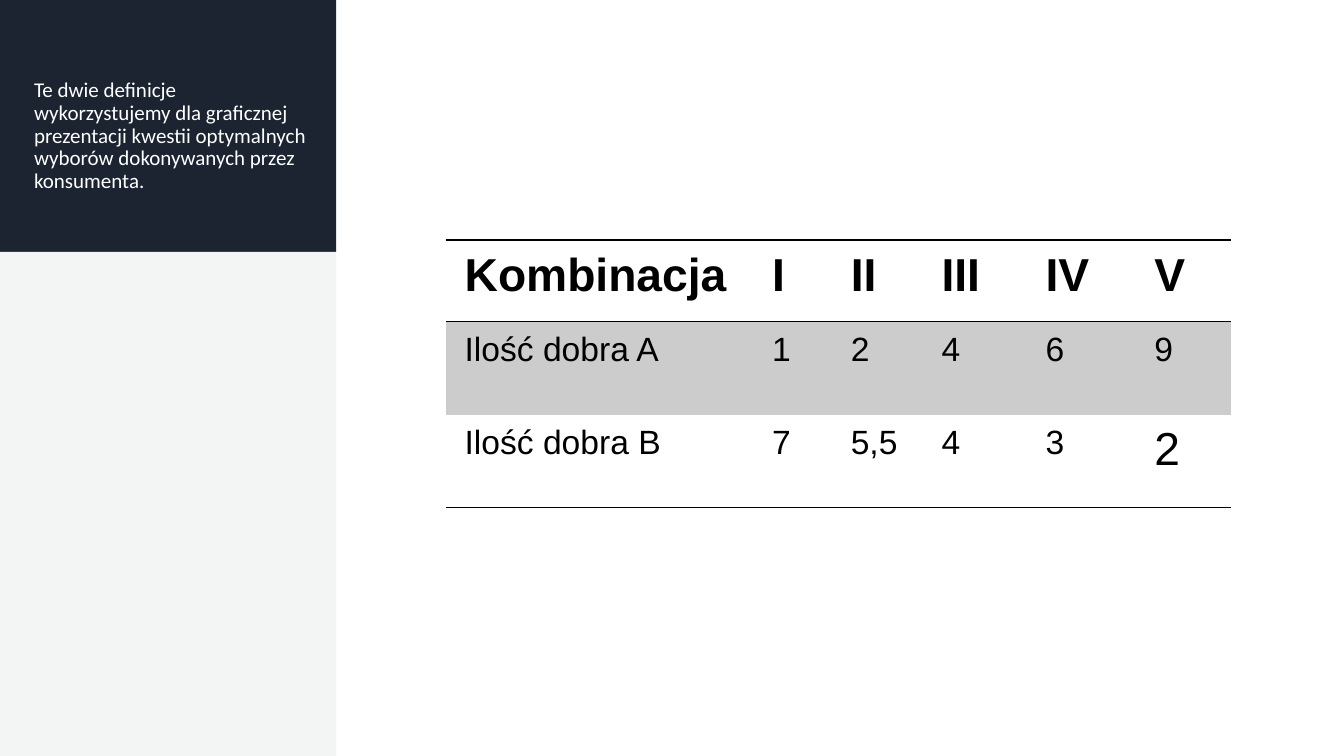
from dataclasses import dataclass

from lxml import etree
from pptx import Presentation
from pptx.dml.color import RGBColor
from pptx.enum.shapes import MSO_SHAPE
from pptx.enum.text import MSO_ANCHOR
from pptx.oxml.ns import qn
from pptx.util import Cm, Pt

RECT = MSO_SHAPE.RECTANGLE
MIDDLE = MSO_ANCHOR.MIDDLE


@dataclass(frozen=True)
class Theme:
    """Colours, fonts and type sizes of the slide."""
    navy: str = "1B2430"
    pale: str = "F3F5F4"
    band: str = "CCCCCC"
    white: str = "FFFFFF"
    black: str = "000000"
    text_font: str = "Calibri"
    table_font: str = "Arial"
    text_size: int = 15
    body_size: int = 24
    large_size: int = 33
    rule_width: int = 1


THEME = Theme()
INTRO = ("Te dwie definicje wykorzystujemy dla graficznej prezentacji kwestii "
         "optymalnych wyborów dokonywanych przez konsumenta.")
ROWS = [
    ["Kombinacja", "I", "II", "III", "IV", "V"],
    ["Ilość dobra A", "1", "2", "4", "6", "9"],
    ["Ilość dobra B", "7", "5,5", "4", "3", "2"],
]
COL_WIDTHS = [7.75, 1.98, 2.29, 2.62, 2.74, 2.41]
ROW_HEIGHTS = [2.06, 2.34, 2.34]
ROW_RULES = [("lnT", "lnB"), ("lnT",), ("lnB",)]
SIDEBAR_WIDTH, INTRO_HEIGHT = 8.47, 6.35
SLIDE_WIDTH, SLIDE_HEIGHT = 33.87, 19.05


def style_text(p, font, size, color, bold=False):
    """Format every run of a paragraph."""
    for r in p.runs:
        r.font.name = font
        r.font.size = Pt(size)
        r.font.bold = bold
        r.font.color.rgb = RGBColor.from_string(color)


def add_panel(s, top, height, color):
    """Add a plain sidebar rectangle."""
    sp = s.shapes.add_shape(RECT, Cm(0), Cm(top), Cm(SIDEBAR_WIDTH), Cm(height))
    sp.shadow.inherit = False
    sp.fill.solid()
    sp.fill.fore_color.rgb = RGBColor.from_string(color)
    sp.line.fill.background()


def add_intro(s):
    """Add the introductory sentence on the dark panel."""
    sp = s.shapes.add_textbox(Cm(0.61), Cm(1.09), Cm(7.37), Cm(4.7))
    tf = sp.text_frame
    tf.word_wrap = True
    tf.vertical_anchor = MIDDLE
    tf.text = INTRO
    p = tf.paragraphs[0]
    p.line_spacing = 0.9
    style_text(p, THEME.text_font, THEME.text_size, THEME.white)


def set_borders(cell, ruled):
    """Draw the named sides of a cell and clear the others."""
    tcPr = cell._tc.get_or_add_tcPr()
    for side in ("lnL", "lnR", "lnT", "lnB"):
        ln = etree.SubElement(tcPr, qn(f"a:{side}"), w=str(Pt(THEME.rule_width)))
        if side in ruled:
            fill = etree.SubElement(ln, qn("a:solidFill"))
            etree.SubElement(fill, qn("a:srgbClr"), val=THEME.black)
        else:
            etree.SubElement(ln, qn("a:noFill"))


def fill_cell(cell, text, size, bold, banded, ruled):
    """Write and format one table cell."""
    cell.margin_left = cell.margin_right = Cm(0.48)
    cell.margin_top = cell.margin_bottom = Cm(0.23)
    cell.text = text
    style_text(cell.text_frame.paragraphs[0], THEME.table_font, size, THEME.black, bold)
    set_borders(cell, ruled)
    if banded:
        cell.fill.solid()
        cell.fill.fore_color.rgb = RGBColor.from_string(THEME.band)
    else:
        cell.fill.background()


def add_combinations(s):
    """Add the table of combinations of goods A and B."""
    table = s.shapes.add_table(
        len(ROWS), len(COL_WIDTHS), Cm(11.23), Cm(6.05),
        Cm(sum(COL_WIDTHS)), Cm(sum(ROW_HEIGHTS))).table
    table.first_row = table.horz_banding = False
    for col, width in zip(table.columns, COL_WIDTHS):
        col.width = Cm(width)
    last = (len(ROWS) - 1, len(COL_WIDTHS) - 1)
    for i, values in enumerate(ROWS):
        table.rows[i].height = Cm(ROW_HEIGHTS[i])
        for j, text in enumerate(values):
            large = i == 0 or (i, j) == last
            size = THEME.large_size if large else THEME.body_size
            fill_cell(table.cell(i, j), text, size, i == 0, i == 1, ROW_RULES[i])


def main():
    """Build and save the slide."""
    prs = Presentation()
    prs.slide_width, prs.slide_height = Cm(SLIDE_WIDTH), Cm(SLIDE_HEIGHT)
    s = prs.slides.add_slide(prs.slide_layouts[6])
    add_panel(s, 0, INTRO_HEIGHT, THEME.navy)
    add_panel(s, INTRO_HEIGHT, SLIDE_HEIGHT - INTRO_HEIGHT, THEME.pale)
    add_intro(s)
    add_combinations(s)
    prs.save("out.pptx")


if __name__ == "__main__":
    main()
